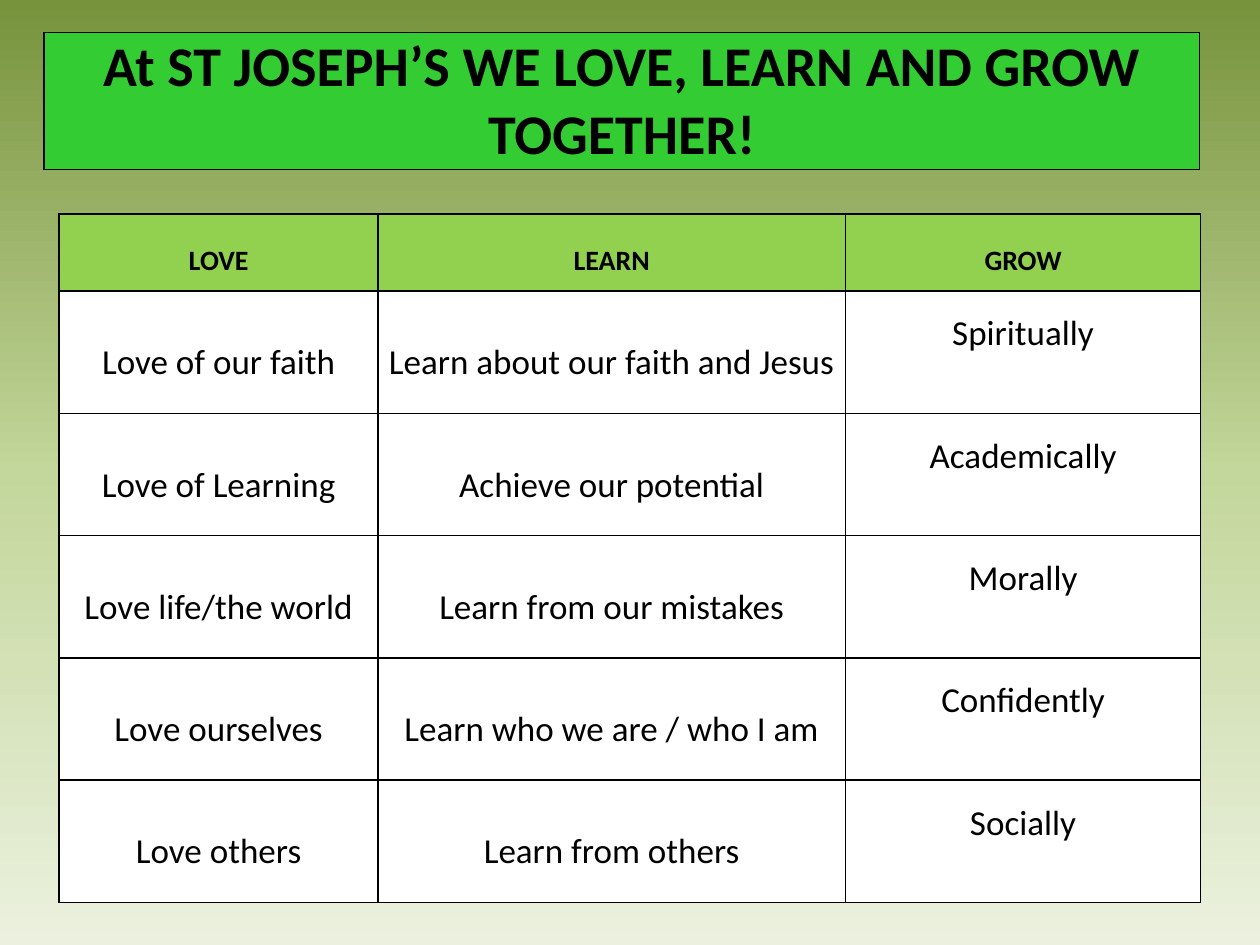
"""Build the slide on how the school loves, learns and grows together."""
import copy

import pptx
import pptx.dml.color
import pptx.enum.text
import pptx.oxml
import pptx.oxml.ns
import pptx.util

RGBColor = pptx.dml.color.RGBColor
Inches = pptx.util.Inches
MSO_ANCHOR = pptx.enum.text.MSO_ANCHOR
BLACK = RGBColor(0x00, 0x00, 0x00)
WHITE = RGBColor(0xFF, 0xFF, 0xFF)
TITLE_GREEN = RGBColor(0x33, 0xCC, 0x33)
HEADER_GREEN = RGBColor(0x92, 0xD0, 0x50)
BACKGROUND_STOPS = [
    (0, RGBColor(0x77, 0x93, 0x3C)),
    (0.5, RGBColor(0xC3, 0xD6, 0x9B)),
    (1, RGBColor(0xEB, 0xF1, 0xDE)),
]
FONT = "Calibri"
SIDE_MARGIN = 0.07
TITLE = "At ST JOSEPH’S WE LOVE, LEARN AND GROW TOGETHER!"
ROWS = [
    ("LOVE", "LEARN", "GROW"),
    ("Love of our faith", "Learn about our faith and Jesus", "Spiritually"),
    ("Love of Learning", "Achieve our potential", "Academically"),
    ("Love life/the world", "Learn from our mistakes", "Morally"),
    ("Love ourselves", "Learn who we are / who I am", "Confidently"),
    ("Love others", "Learn from others", "Socially"),
]
COLUMN_WIDTHS = [2.53, 3.71, 2.82]
HEADER_HEIGHT = 0.61
ROW_HEIGHT = 0.97
GROW_BOTTOM_MARGIN = 0.46


def set_background(slide):
    """Fill the slide with a gradient running from top to bottom."""
    fill = slide.background.fill
    fill.gradient()
    fill.gradient_angle = 270
    stop_list = slide.element.find(".//" + pptx.oxml.ns.qn("a:gsLst"))
    stop_list.append(copy.deepcopy(stop_list[-1]))
    for stop, (position, color) in zip(fill.gradient_stops, BACKGROUND_STOPS):
        stop.position = position
        stop.color.rgb = color


def add_borders(cell):
    """Draw a thin black line on every side of a cell."""
    properties = cell._tc.get_or_add_tcPr()
    for index, side in enumerate(("lnL", "lnR", "lnT", "lnB")):
        border = pptx.oxml.parse_xml(
            f'<a:{side} {pptx.oxml.ns.nsdecls("a")} w="12700"><a:solidFill>'
            f'<a:srgbClr val="{BLACK}"/></a:solidFill></a:{side}>'
        )
        properties.insert(index, border)


def fill_cell(cell, text, color, size, bold, line_spacing=1.5,
              anchor=MSO_ANCHOR.MIDDLE, bottom_margin=0):
    """Write and format one table cell."""
    cell.text = text
    cell.vertical_anchor = anchor
    cell.margin_left = cell.margin_right = Inches(SIDE_MARGIN)
    cell.margin_top = 0
    cell.margin_bottom = Inches(bottom_margin)
    cell.fill.solid()
    cell.fill.fore_color.rgb = color
    paragraph = cell.text_frame.paragraphs[0]
    paragraph.alignment = pptx.enum.text.PP_ALIGN.CENTER
    paragraph.line_spacing = line_spacing
    font = paragraph.font
    font.name = FONT
    font.size = pptx.util.Pt(size)
    font.bold = bold
    font.color.rgb = BLACK
    add_borders(cell)


def add_grid(slide, left, top, widths, heights):
    """Add an empty table with the given column widths and row heights."""
    table = slide.shapes.add_table(
        len(heights), len(widths), Inches(left), Inches(top),
        Inches(sum(widths)), Inches(sum(heights)),
    ).table
    for column, width in zip(table.columns, widths):
        column.width = Inches(width)
    for row, height in zip(table.rows, heights):
        row.height = Inches(height)
    return table


def add_title_table(slide):
    """Add the one-cell table that carries the heading."""
    table = add_grid(slide, 0.35, 0.26, [9.17], [1.07])
    fill_cell(table.cell(0, 0), TITLE, TITLE_GREEN, 32, True, 1, MSO_ANCHOR.TOP)


def add_values_table(slide):
    """Add the table of what the school loves, learns and grows in."""
    heights = [HEADER_HEIGHT] + [ROW_HEIGHT] * (len(ROWS) - 1)
    table = add_grid(slide, 0.47, 1.7, COLUMN_WIDTHS, heights)
    for column_index, heading in enumerate(ROWS[0]):
        fill_cell(table.cell(0, column_index), heading, HEADER_GREEN, 16, True)
    for row_index, texts in enumerate(ROWS[1:], start=1):
        for column_index, text in enumerate(texts):
            is_grow = column_index == len(texts) - 1
            fill_cell(table.cell(row_index, column_index), text, WHITE, 20, False,
                      bottom_margin=GROW_BOTTOM_MARGIN if is_grow else 0)


def main():
    """Build and save the presentation."""
    presentation = pptx.Presentation()
    presentation.slide_width, presentation.slide_height = Inches(10), Inches(7.5)
    slide = presentation.slides.add_slide(presentation.slide_layouts.get_by_name("Blank"))
    set_background(slide)
    add_title_table(slide)
    add_values_table(slide)
    presentation.save("out.pptx")


if __name__ == "__main__":
    main()
